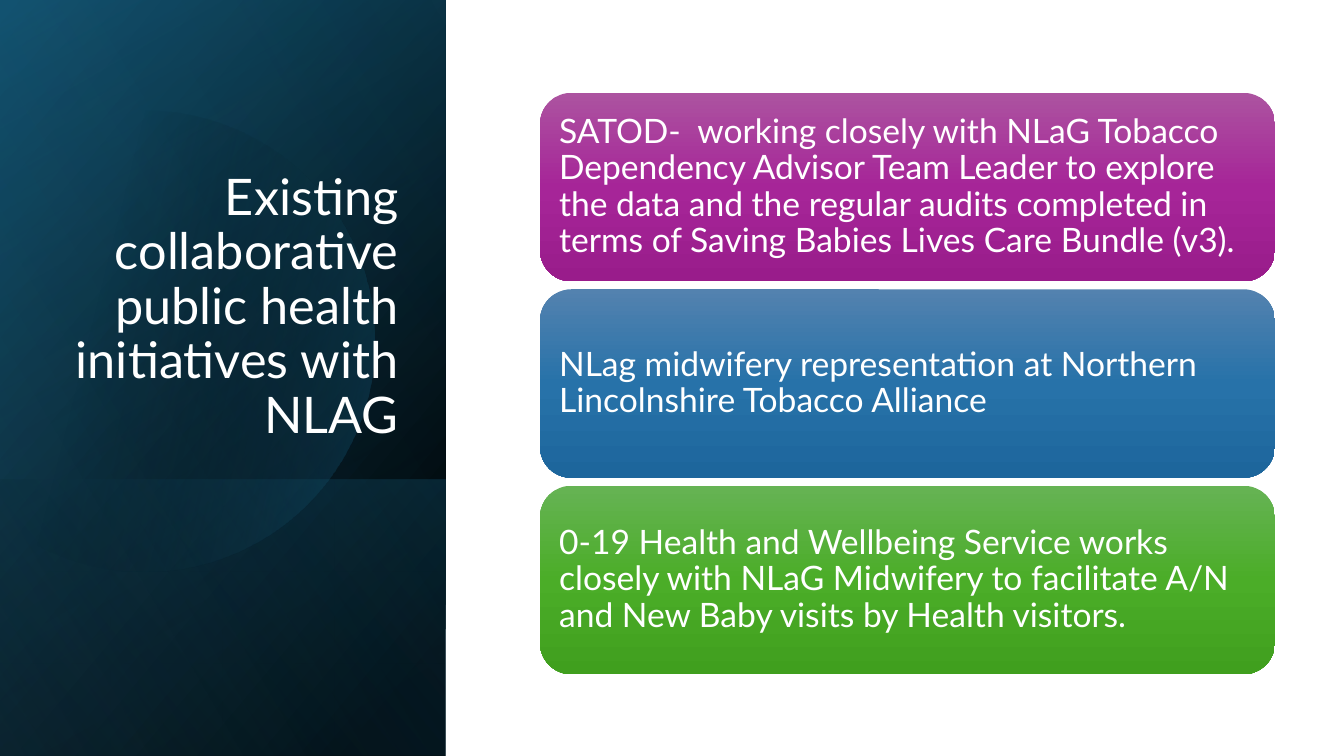
from math import cos, radians, sin

from lxml.etree import SubElement
from pptx import Presentation
from pptx.dml.color import RGBColor
from pptx.enum.shapes import MSO_SHAPE
from pptx.enum.text import MSO_ANCHOR, PP_ALIGN
from pptx.oxml.ns import qn
from pptx.util import Cm, Pt

WHITE = RGBColor(0xFF, 0xFF, 0xFF)
BLACK = RGBColor(0x00, 0x00, 0x00)
DEEP_TEAL = RGBColor(0x10, 0x48, 0x62)
TEAL = RGBColor(0x15, 0x60, 0x82)
SKY = RGBColor(0x46, 0xB1, 0xE1)
PURPLES = (RGBColor(0xAC, 0x53, 0xA0), RGBColor(0xA6, 0x25, 0x98), RGBColor(0x99, 0x1C, 0x8B))
BLUES = (RGBColor(0x53, 0x82, 0xAF), RGBColor(0x27, 0x72, 0xA9), RGBColor(0x1D, 0x66, 0x9C))
GREENS = (RGBColor(0x66, 0xB3, 0x54), RGBColor(0x4B, 0xAD, 0x28), RGBColor(0x40, 0x9F, 0x1E))

SLIDE_WIDTH, SLIDE_HEIGHT = 33.87, 19.05
PANEL_WIDTH = 11.23
CARD_LEFT, CARD_TOP, CARD_WIDTH, CARD_HEIGHT, CARD_PITCH = 13.61, 2.34, 18.52, 4.75, 4.95

INITIATIVES = [
    ("SATOD-  working closely with NLaG Tobacco Dependency Advisor Team Leader "
     "to explore the data and the regular audits completed in terms of "
     "Saving Babies Lives Care Bundle (v3).", PURPLES),
    ("NLag midwifery representation at Northern Lincolnshire Tobacco Alliance", BLUES),
    ("0-19 Health and Wellbeing Service works closely with NLaG Midwifery to "
     "facilitate A/N and New Baby visits by Health visitors.", GREENS),
]


def fill_gradient(shape, stops, angle):
    """Fill with (position %, colour, opacity %) stops at a clockwise angle; no line or shadow."""
    shape.shadow.inherit = False
    shape.line.fill.background()
    shape.fill.gradient()
    shape.fill.gradient_angle = 360 - angle
    stop_list = shape._element.spPr.find(qn("a:gradFill")).find(qn("a:gsLst"))
    for default_stop in list(stop_list):
        stop_list.remove(default_stop)
    for position, colour, opacity in stops:
        stop = SubElement(stop_list, qn("a:gs"), pos=str(position * 1000))
        tint = SubElement(stop, qn("a:srgbClr"), val=str(colour))
        if opacity < 100:
            SubElement(tint, qn("a:alpha"), val=str(opacity * 1000))


def add_panel_layer(slide, stops, angle, top=0.0):
    """Cover the left panel from top to the slide's foot with a turned, mirrored gradient."""
    length = SLIDE_HEIGHT - top
    layer = slide.shapes.add_shape(
        MSO_SHAPE.RECTANGLE,
        Cm((PANEL_WIDTH - length) / 2), Cm(top + (length - PANEL_WIDTH) / 2),
        Cm(length), Cm(PANEL_WIDTH))
    layer.rotation = 90
    layer._element.spPr.xfrm.set("flipH", "1")
    fill_gradient(layer, stops, angle)


def add_cut_circle(slide, centre_x, centre_y, radius, stops, angle):
    """Draw a circle cut off by the slide's left edge."""
    arc = [(Cm(centre_x + radius * cos(radians(turn))),
            Cm(centre_y + radius * sin(radians(turn))))
           for turn in range(-128, 129, 2)]
    outline = slide.shapes.build_freeform(*arc[0])
    outline.add_line_segments(arc[1:], close=True)
    fill_gradient(outline.convert_to_shape(), stops, angle)


def write_text(shape, text, size, align=PP_ALIGN.LEFT, anchor=MSO_ANCHOR.MIDDLE,
               colour=WHITE, font="Lato", line_spacing=0.9, inset=0.25):
    frame = shape.text_frame
    frame.word_wrap = True
    frame.vertical_anchor = anchor
    frame.margin_left = frame.margin_right = Cm(0.25)
    frame.margin_top = frame.margin_bottom = Cm(inset)
    paragraph = frame.paragraphs[0]
    paragraph.text = text
    paragraph.alignment = align
    paragraph.line_spacing = line_spacing
    paragraph.font.size = Pt(size)
    paragraph.font.name = font
    paragraph.font.color.rgb = colour


def add_card(slide, top, text, colours):
    card = slide.shapes.add_shape(MSO_SHAPE.ROUNDED_RECTANGLE, Cm(CARD_LEFT), Cm(top),
                                  Cm(CARD_WIDTH), Cm(CARD_HEIGHT))
    fill_gradient(card, [(50 * i, colour, 100) for i, colour in enumerate(colours)], 90)
    write_text(card, text, 24)


def main():
    presentation = Presentation()
    presentation.slide_width = Cm(SLIDE_WIDTH)
    presentation.slide_height = Cm(SLIDE_HEIGHT)
    slide = presentation.slides.add_slide(presentation.slide_layouts[6])

    add_panel_layer(slide, [(8, BLACK, 100), (100, DEEP_TEAL, 100)], 50)
    add_panel_layer(slide, [(0, BLACK, 0), (99, TEAL, 46)], 30)
    add_panel_layer(slide, [(2, TEAL, 29), (100, BLACK, 30)], 130, top=12.09)
    add_cut_circle(slide, 3.63, 8.6, 5.81, [(29, BLACK, 0), (100, TEAL, 43)], 14)
    add_panel_layer(slide, [(0, BLACK, 0), (99, SKY, 11)], 120)

    title = slide.shapes.add_textbox(Cm(1.63), Cm(4.67), Cm(8.66), Cm(6.65))
    write_text(title, "Existing collaborative public health initiatives with NLAG", 36,
               align=PP_ALIGN.RIGHT, anchor=MSO_ANCHOR.BOTTOM, inset=0.13)

    for row, (text, colours) in enumerate(INITIATIVES):
        add_card(slide, CARD_TOP + row * CARD_PITCH, text, colours)

    presentation.save("out.pptx")


if __name__ == "__main__":
    main()
